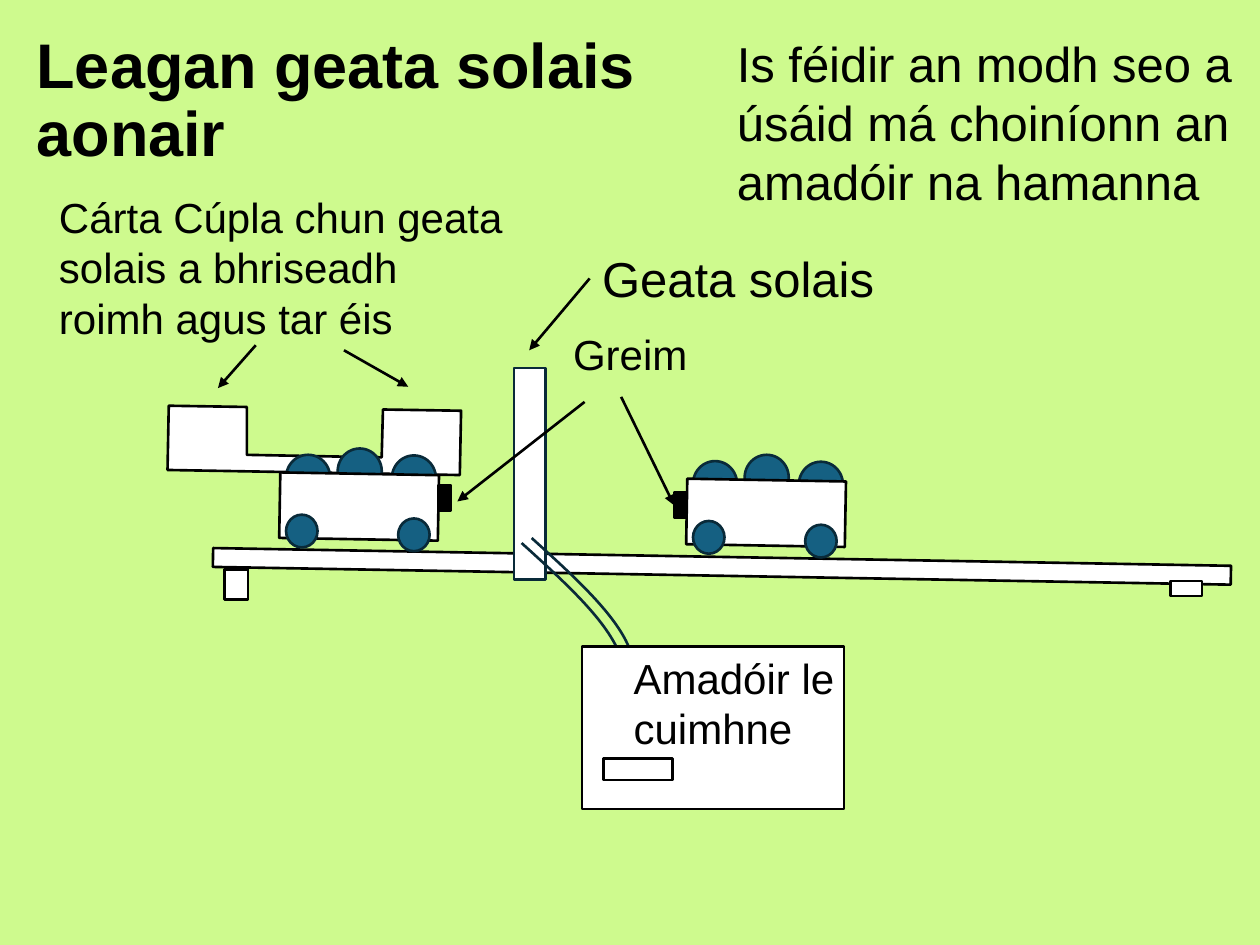
from pptx import Presentation
from pptx.dml.color import RGBColor as Rgb
from pptx.enum.shapes import MSO_CONNECTOR as Conn, MSO_SHAPE as Kind
from pptx.enum.text import MSO_ANCHOR as Anchor, PP_ALIGN as Align
from pptx.oxml.ns import qn
from pptx.util import Inches, Pt
from lxml.etree import SubElement as Sub

HUES = {"back": "CEFA8E", "ink": "000000", "white": "FFFFFF", "blue": "156082", "navy": "092A39"}


class Board:
    """Draws on one slide whose grid has 100 columns and 75 rows."""

    def __init__(self):
        self.deck = Presentation()
        self.deck.slide_width, self.deck.slide_height = Inches(10), Inches(7.5)
        self.slide = self.deck.slides.add_slide(self.deck.slide_layouts[5])
        self.shapes = self.slide.shapes
        self.paint(self.slide.background.fill, "back")

    def grid(self, *cells):
        return [int(cell * self.deck.slide_width / 100) for cell in cells]

    def paint(self, fill, hue):
        fill.solid()
        fill.fore_color.rgb = Rgb.from_string(HUES[hue])

    def edge(self, shape, hue):
        self.paint(shape.line.fill, hue)
        shape.line.width = Pt(1.5)

    def style(self, shape, fill, edge):
        shape.shadow.inherit = False
        if fill:
            self.paint(shape.fill, fill)
        else:
            shape.fill.background()
        self.edge(shape, edge)

    def rect(self, x, y, w, h, fill="white", edge="ink", turn=0):
        shape = self.shapes.add_shape(Kind.RECTANGLE, *self.grid(x, y, w, h))
        shape.rotation = turn
        self.style(shape, fill, edge)

    def disc(self, x, y, w, h):
        shape = self.shapes.add_shape(Kind.OVAL, *self.grid(x, y, w, h))
        self.style(shape, "blue", "navy")

    def outline(self, points, fill, edge, closed):
        first, *rest = [self.grid(*point) for point in points]
        pen = self.shapes.build_freeform(*first)
        pen.add_line_segments(rest, close=closed)
        shape = pen.convert_to_shape()
        self.style(shape, fill, edge)
        return shape

    def curve(self, points):
        shape = self.outline(points, None, "navy", False)
        steps = list(shape.element.iter(qn("a:lnTo")))
        track = steps[0].getparent()
        for i in range(0, len(steps), 3):
            bend = Sub(track, qn("a:cubicBezTo"))
            for step in steps[i:i + 3]:
                bend.append(step[0])
                track.remove(step)

    def arrow(self, *ends):
        line = self.shapes.add_connector(Conn.STRAIGHT, *self.grid(*ends))
        self.edge(line, "ink")
        props = line.element.spPr
        Sub(props.find(qn("a:ln")), qn("a:tailEnd"), type="triangle")
        Sub(props, qn("a:effectLst"))

    def letter(self, shape, text, size, bold=False, wrap=True):
        frame = shape.text_frame
        frame.text, frame.word_wrap = text, wrap
        frame.vertical_anchor = Anchor.TOP
        para = frame.paragraphs[0]
        para.alignment = Align.LEFT
        font = para.runs[0].font
        font.name, font.size, font.bold = "Arial", Pt(size), bold
        font.color.rgb = Rgb.from_string(HUES["ink"])
        return para

    def title(self, text, x, y, w, h):
        shape = self.shapes.title
        shape.left, shape.top, shape.width, shape.height = self.grid(x, y, w, h)
        self.letter(shape, text, 36, True).line_spacing = 0.9

    def label(self, text, x, y, w, h, size=24, wrap=True):
        box = self.shapes.add_textbox(*self.grid(x, y, w, h))
        return self.letter(box, text, size, wrap=wrap)

    def cart(self, x, y):
        for dx, dy in ((0.5, -1.5), (4.6, -2), (8.9, -1.45)):
            self.disc(x + dx, y + dy, 3.5, 3.6)
        self.rect(x, y, 12.6, 5.2, turn=1)
        for dx, dy in ((0.5, 3.25), (9.4, 3.55)):
            self.disc(x + dx, y + dy, 2.5, 2.6)


def main():
    board = Board()
    board.title("Leagan geata solais aonair", 1.9, 2.2, 60.7, 11.7)
    board.rect(16.9, 44.2, 80.8, 1.5, turn=1)
    board.rect(40.8, 29.2, 2.5, 16.8, edge="navy")
    board.rect(17.8, 45.2, 1.9, 2.4)
    board.rect(92.9, 46.1, 2.5, 1.2)

    cable = ((41.4, 43.1), (44.6, 46), (47.8, 48.9), (49, 51.5), (50.2, 54),
             (47.3, 56.7), (48.4, 58.5), (49.5, 60.2), (52.6, 61.1), (55.7, 62))
    for dx, dy in ((0, 0), (0.8, -0.4)):
        board.curve([(x + dx, y + dy) for x, y in cable])

    card = ((13.4, 32.2), (19.6, 32.3), (19.6, 36.1), (30.3, 36.3),
            (30.4, 32.5), (36.6, 32.6), (36.5, 37.7), (13.3, 37.3))
    board.outline(card, "white", "ink", True)
    for x, y in ((22.2, 37.6), (54.5, 38.1)):
        board.cart(x, y)
    for x, y in ((34.8, 38.5), (53.5, 39.1)):
        board.rect(x, y, 1, 2, fill="ink")

    board.label("Geata solais", 46.8, 19.2, 23.9, 5.7, 28, False)
    board.label("Cárta Cúpla chun geata solais a bhriseadh roimh agus tar éis",
                3.7, 14.7, 37.4, 13.1)
    board.label("Greim", 44.5, 25.6, 12.9, 5)
    board.label("Is féidir an modh seo a úsáid má choiníonn an amadóir na hamanna",
                57.5, 2.2, 43.3, 15.1, 28).space_after = Pt(12)

    for ends in ((20.3, 27.4, 17.3, 30.8), (27.3, 27.8, 32.4, 30.7),
                 (46.8, 22.1, 42, 27.8), (46.4, 31.9, 36.3, 39.8),
                 (49.3, 31.5, 53.5, 40.1)):
        board.arrow(*ends)

    board.rect(46.2, 51.3, 20.8, 12.9)
    board.rect(47.9, 60.2, 5.5, 1.7)
    board.label("Amadóir le cuimhne", 49.3, 51.3, 19.2, 9.1)
    board.deck.save("out.pptx")


if __name__ == "__main__":
    main()
